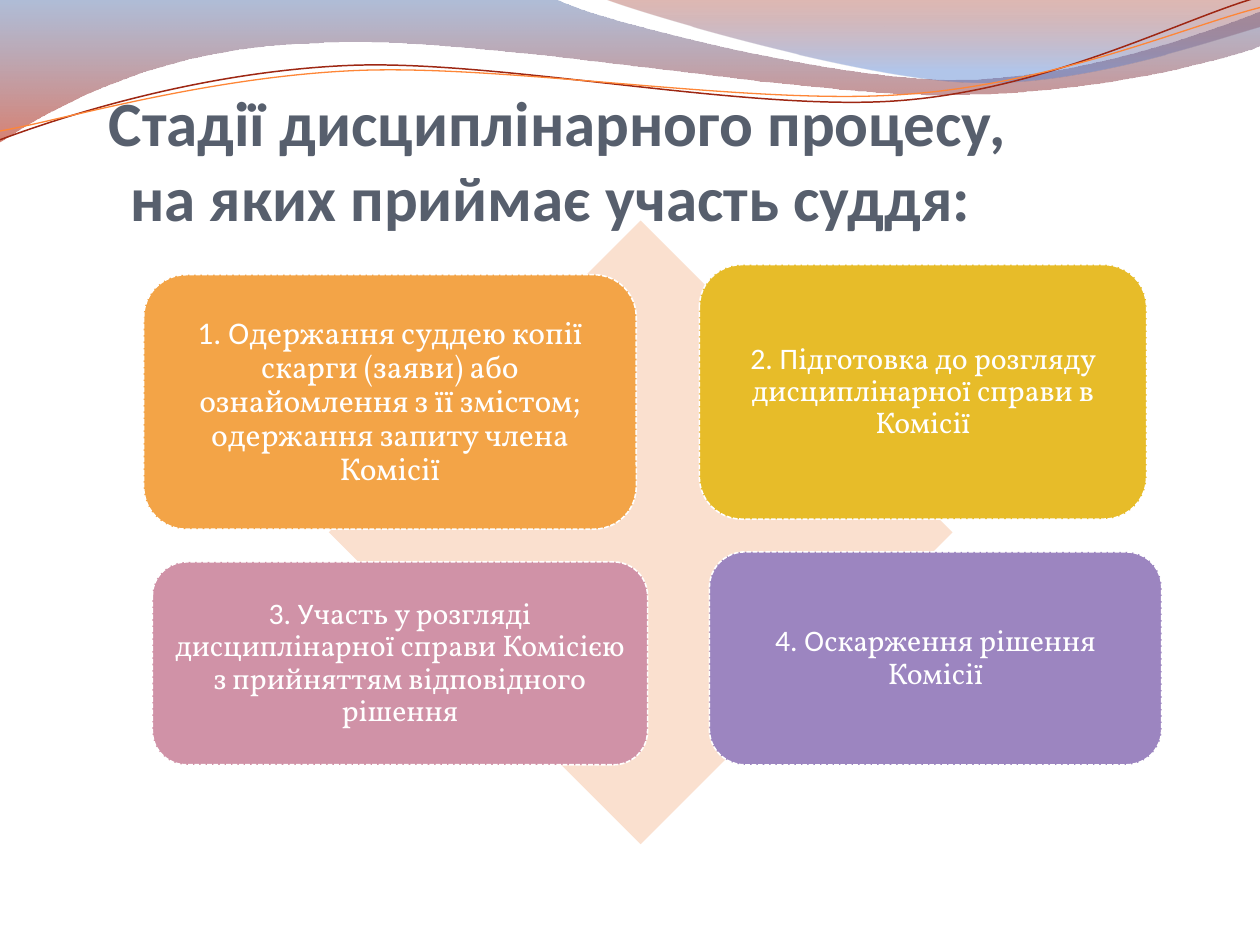
from dataclasses import dataclass

from lxml import etree
from pptx import Presentation
from pptx.dml.color import RGBColor
from pptx.enum.dml import MSO_LINE
from pptx.enum.shapes import MSO_SHAPE
from pptx.enum.text import MSO_ANCHOR, PP_ALIGN
from pptx.oxml.ns import qn
from pptx.util import Inches, Pt

DIAMOND, ROUNDED = MSO_SHAPE.DIAMOND, MSO_SHAPE.ROUNDED_RECTANGLE
CENTER, MIDDLE, BOTTOM = PP_ALIGN.CENTER, MSO_ANCHOR.MIDDLE, MSO_ANCHOR.BOTTOM
DASH = MSO_LINE.SQUARE_DOT

WHITE = RGBColor(0xFF, 0xFF, 0xFF)
SLATE = RGBColor(0x57, 0x5F, 0x6D)
PEACH = RGBColor(0xFA, 0xE0, 0xCF)
ORANGE = RGBColor(0xF3, 0xA4, 0x47)
YELLOW = RGBColor(0xE7, 0xBC, 0x29)
PINK = RGBColor(0xD0, 0x92, 0xA7)
PURPLE = RGBColor(0x9C, 0x85, 0xC0)
NAVY = RGBColor(0x4F, 0x6E, 0xA8)
RED = RGBColor(0xB6, 0x1A, 0x00)
MAROON = RGBColor(0x95, 0x15, 0x00)
BLUE = RGBColor(0x56, 0x81, 0xD1)
BRICK = RGBColor(0x9E, 0x27, 0x13)
BRIGHT_ORANGE = RGBColor(0xFE, 0x86, 0x37)

HEAD_FONT, BODY_FONT = "Calibri", "Vollkorn"


@dataclass
class Stop:
    position: float
    color: RGBColor
    opacity: int  # percent


@dataclass
class Wave:
    """Segments of two numbers are lines, of six numbers Bezier curves."""
    start: tuple
    segments: list
    stops: tuple = ()
    line: RGBColor | None = None
    width: float = 0


@dataclass
class Stage:
    left: float
    top: float
    width: float
    height: float
    fill: RGBColor
    size: int
    lead: str  # opening characters, set in the heading font
    text: str


WAVES = [
    Wave((0, 0), [(4.4, -0.01),
                  (4.76, 0.17, 6.64, 0.63, 7.58, 0.63),
                  (8.53, 0.63, 9.58, 0.26, 10, 0.09),
                  (10.01, 0.36),
                  (9.83, 0.44, 8.7, 0.76, 7.46, 0.75),
                  (6.22, 0.75, 3.82, 0.28, 2.57, 0.34),
                  (1.29, 0.36, 0.46, 0.83, -0.01, 1.13),
                  (0, 0)],
         stops=(Stop(0, NAVY, 45), Stop(1, RED, 55))),
    Wave((4.79, -0.01), [(5.09, 0.11, 6.82, 0.62, 7.69, 0.65),
                         (8.56, 0.69, 9.61, 0.32, 10, 0.21),
                         (10, 0),
                         (4.79, -0.01)],
         stops=(Stop(0, MAROON, 30), Stop(0.8, BLUE, 45))),
    Wave((0, 1.11), [(0.48, 0.93, 1.58, 0.57, 2.77, 0.52),
                     (3.95, 0.47, 5.93, 0.89, 7.13, 0.8),
                     (8.33, 0.71, 9.38, 0.15, 9.98, -0.02)],
         line=BRICK, width=0.85),
    Wave((0, 1.04), [(0.47, 0.96, 1.64, 0.61, 2.83, 0.56),
                     (4.03, 0.51, 5.97, 0.84, 7.17, 0.75),
                     (8.36, 0.67, 9.41, 0.21, 10, 0.06)],
         line=BRIGHT_ORANGE, width=0.75),
]

STAGES = [
    Stage(1.14, 2.18, 3.91, 2.02, ORANGE, 18, "1. О",
          "держання суддею копії скарги (заяви) або ознайомлення з її змістом; "
          "одержання запиту члена Комісії"),
    Stage(5.55, 2.1, 3.55, 2.02, YELLOW, 17, "2. П",
          "ідготовка до розгляду дисциплінарної справи в Комісії"),
    Stage(1.21, 4.46, 3.93, 1.61, PINK, 17, "3. У",
          "часть у розгляді дисциплінарної справи Комісією "
          "з прийняттям відповідного рішення"),
    Stage(5.63, 4.38, 3.59, 1.69, PURPLE, 17, "4. О",
          "скарження рішення Комісії"),
]


def bend_curves(sp, segments: list) -> None:
    """Merge the three line steps of each curve segment into one Bezier."""
    steps = iter(list(sp._element.spPr.iter(qn("a:lnTo"))))
    for seg in segments:
        first = next(steps)
        if len(seg) == 6:
            curve = etree.Element(qn("a:cubicBezTo"))
            first.addprevious(curve)
            for step in (first, next(steps), next(steps)):
                curve.append(step[0])
                step.getparent().remove(step)


def add_wave(shapes, wave: Wave) -> None:
    x, y = wave.start
    builder = shapes.build_freeform(Inches(x), Inches(y))
    points = [(Inches(seg[i]), Inches(seg[i + 1]))
              for seg in wave.segments for i in range(0, len(seg), 2)]
    builder.add_line_segments(points, close=bool(wave.stops))
    sp = builder.convert_to_shape()
    bend_curves(sp, wave.segments)
    sp.shadow.inherit = False
    if not wave.stops:
        sp.fill.background()
        sp.line.color.rgb = wave.line
        sp.line.width = Pt(wave.width)
        return
    sp.line.fill.background()
    sp.fill.gradient()
    sp.fill.gradient_angle = 270  # top to bottom
    for target, stop in zip(sp.fill.gradient_stops, wave.stops):
        target.position = stop.position
        target.color.rgb = stop.color
    for clr, stop in zip(sp._element.spPr.iter(qn("a:srgbClr")), wave.stops):
        etree.SubElement(clr, qn("a:alpha")).set("val", str(stop.opacity * 1000))


def add_title(shapes, text: str) -> None:
    sp = shapes.add_textbox(Inches(0.59), Inches(0.36), Inches(7.56), Inches(1.5))
    tf = sp.text_frame
    tf.word_wrap = True
    tf.vertical_anchor = BOTTOM
    tf.margin_left = tf.margin_right = tf.margin_bottom = 0
    p = tf.paragraphs[0]
    p.text = text
    p.alignment = CENTER
    p.font.name, p.font.size, p.font.bold = HEAD_FONT, Pt(36), True
    p.font.color.rgb = SLATE


def add_stage(shapes, stage: Stage) -> None:
    sp = shapes.add_shape(ROUNDED, Inches(stage.left), Inches(stage.top),
                          Inches(stage.width), Inches(stage.height))
    sp.shadow.inherit = False
    sp.fill.solid()
    sp.fill.fore_color.rgb = stage.fill
    sp.line.color.rgb = WHITE
    sp.line.width = Pt(0.9)
    sp.line.dash_style = DASH
    tf = sp.text_frame
    tf.word_wrap = True
    tf.vertical_anchor = MIDDLE
    tf.margin_left = tf.margin_right = tf.margin_top = tf.margin_bottom = Inches(0.07)
    p = tf.paragraphs[0]
    p.alignment = CENTER
    p.line_spacing = 0.9
    p.font.size = Pt(stage.size)
    p.font.color.rgb = WHITE
    for text, font in ((stage.lead, HEAD_FONT), (stage.text, BODY_FONT)):
        r = p.add_run()
        r.text = text
        r.font.name = font


def main() -> None:
    prs = Presentation()
    prs.slide_width, prs.slide_height = Inches(10), Inches(7.5)
    s = prs.slides.add_slide(prs.slide_layouts[6])

    # Waves along the top
    for wave in WAVES:
        add_wave(s.shapes, wave)

    add_title(s.shapes, " Стадії дисциплінарного процесу, на яких приймає участь суддя:")

    # Diamond behind the four stages
    diamond = s.shapes.add_shape(DIAMOND, Inches(2.61), Inches(1.75),
                                 Inches(4.95), Inches(4.95))
    diamond.shadow.inherit = False
    diamond.fill.solid()
    diamond.fill.fore_color.rgb = PEACH
    diamond.line.fill.background()

    for stage in STAGES:
        add_stage(s.shapes, stage)

    prs.save("out.pptx")


if __name__ == "__main__":
    main()
